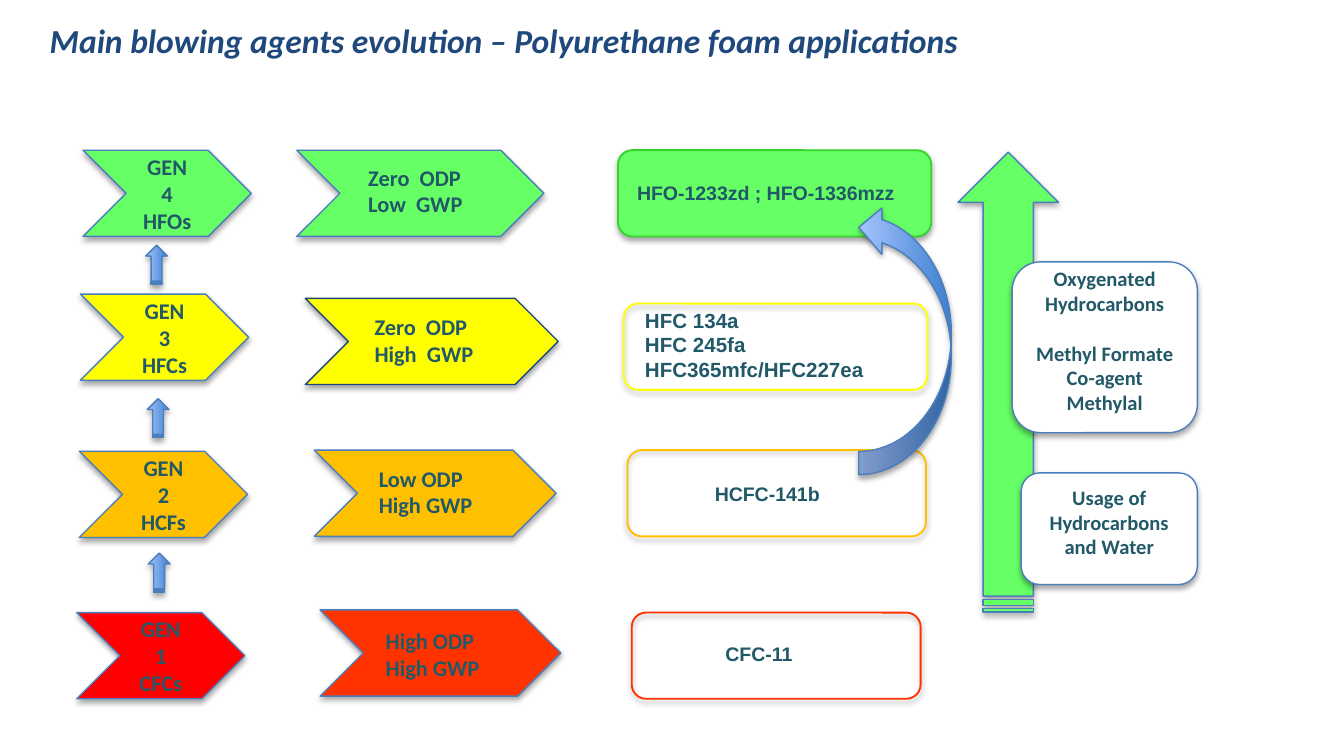
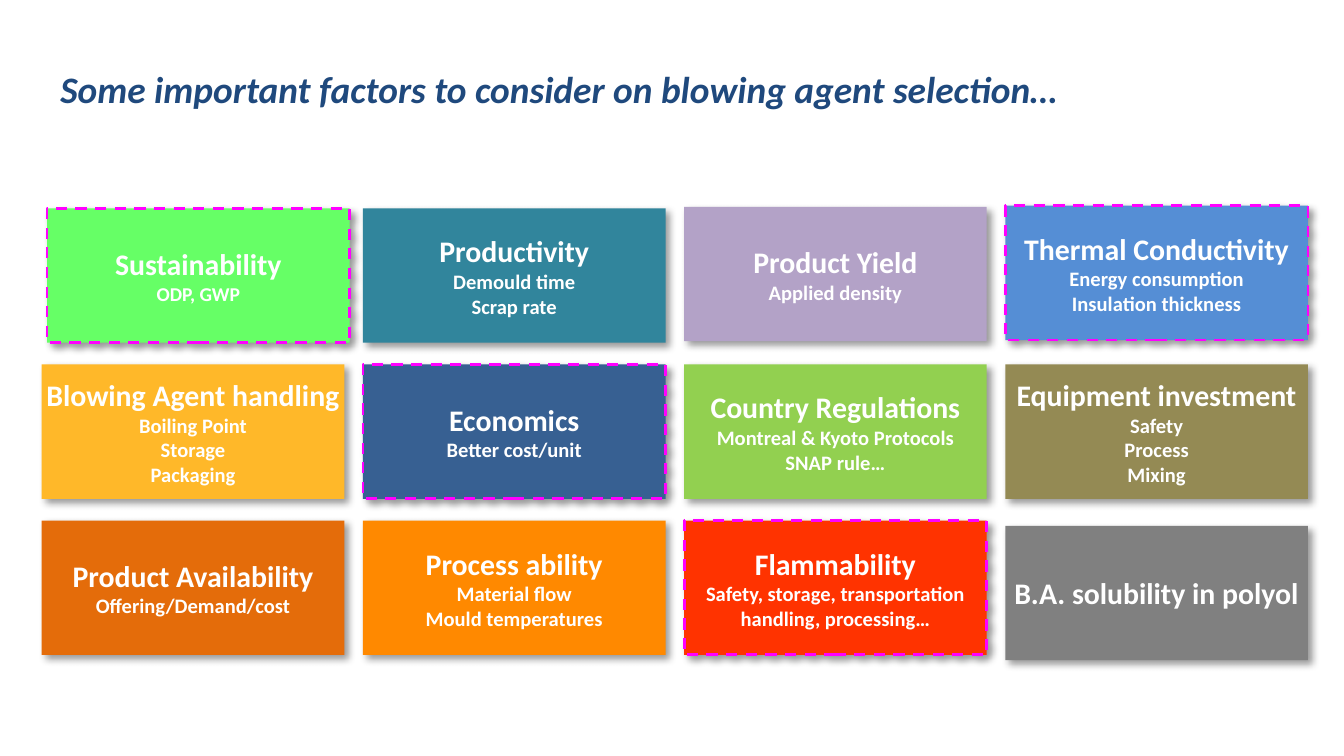
from lxml import etree
from pptx import Presentation
from pptx import util as u
from pptx.dml.color import RGBColor
from pptx.enum import dml, shapes, text
from pptx.oxml.ns import qn

Cm, Pt = u.Cm, u.Pt
KIND = shapes.MSO_SHAPE

NAVY, TEAL, EDGE, WHITE = "1F497D", "215968", "4B7EBC", "FFFFFF"
GREEN, YELLOW, AMBER, RED, SCARLET = "66FF66", "FFFF00", "FFC000", "FF0000", "FF3300"
MAGENTA = "FF00FF"
BLUES = ("3F80CE", "A4C4FF")
SOFT = (35, 3.1, 1.8, 90)
DROP = (40, 4, 3, 45)

EVOLUTION_TITLE = "Main blowing agents evolution – Polyurethane foam applications"
FACTORS_TITLE = "Some important factors to consider on blowing agent selection…"

ROW_H = 1.63
GENERATIONS = [
    (1.57, 2.84, GREEN, ["GEN 4", "HFOs"]),
    (1.52, 5.56, YELLOW, ["GEN 3", "HFCs"]),
    (1.5, 8.53, AMBER, ["GEN", "2", "HCFs"]),
    (1.45, 11.58, RED, ["GEN 1", "CFCs"]),
]
IMPACTS = [
    (5.61, 2.84, 4.67, GREEN, EDGE, (6.71, 2.97), ["Zero  ODP", "Low  GWP"]),
    (5.77, 5.64, 4.78, YELLOW, NAVY, (6.83, 5.79), ["Zero  ODP", "High  GWP"]),
    (5.94, 8.51, 4.57, AMBER, EDGE, (6.91, 8.66), ["Low ODP", "High GWP"]),
    (6.05, 11.53, 4.55, SCARLET, EDGE, (7.04, 11.73), ["High ODP", "High GWP"]),
]
AGENTS = [
    (11.68, 2.84, 5.92, GREEN, "34D42C", (11.79, 3.3, 5.69, 1.14), 10.5,
     ["HFO-1233zd ; HFO-1336mzz"]),
    (11.79, 5.74, 5.74, None, YELLOW, (11.94, 5.69, 4.8, 1.7), 11,
     ["HFC 134a", "HFC 245fa", "HFC365mfc/HFC227ea"]),
    (11.86, 8.51, 5.64, None, AMBER, (13.26, 8.99, 2.59, 0.74), 10.5, ["HCFC-141b"]),
    (11.94, 11.58, 5.46, None, SCARLET, (13.46, 12.01, 2.06, 0.74), 10.5, ["CFC-11"]),
]
STEPS = [(2.59, 4.8), (2.62, 7.7), (2.64, 10.62)]
ALTERNATIVES = [
    ((19.3, 8.94, 3.33, 2.11), 0.13, ["Usage of Hydrocarbons and Water"]),
    ((19.13, 4.95, 3.5, 3.23), 0,
     ["Oxygenated Hydrocarbons", "Methyl Formate", "Co-agent", "Methylal"]),
]

FACTORS = [
    [(GREEN, "Sustainability", ["ODP, GWP"]),
     ("31859C", "Productivity", ["Demould time", "Scrap rate"]),
     ("B3A2C7", "Product Yield", ["Applied density"]),
     ("558ED5", "Thermal Conductivity", ["Energy consumption", "Insulation thickness"])],
    [("FFB829", "Blowing Agent handling", ["Boiling Point", "Storage", "Packaging"]),
     ("376092", "Economics", ["Better cost/unit"]),
     ("92D050", "Country Regulations", ["Montreal & Kyoto Protocols", "SNAP rule…"]),
     ("948A54", "Equipment investment", ["Safety", "Process", "Mixing"])],
    [("E46C0A", "Product Availability", ["Offering/Demand/cost"]),
     ("FF8900", "Process ability", ["Material flow", "Mould temperatures"]),
     (SCARLET, "Flammability", ["Safety, storage, transportation", "handling, processing…"]),
     ("808080", "B.A. solubility in polyol", [])],
]
KEY_FACTORS = {"Sustainability", "Thermal Conductivity", "Economics", "Flammability"}
NUDGES = {"Sustainability": (0.1, 0), "Thermal Conductivity": (0, -0.05),
          "Product Yield": (0, -0.03), "B.A. solubility in polyol": (0, 0.1)}
GRID_X, GRID_Y, PITCH_X, PITCH_Y, TILE_W, TILE_H = 0.79, 3.94, 6.07, 2.95, 5.72, 2.54


def rgb(value):
    return RGBColor.from_string(value)


def add_shadow(sp, alpha, blur, dist, angle):
    sp.shadow.inherit = False
    effects = sp._element.spPr.find(qn("a:effectLst"))
    outer = etree.SubElement(effects, qn("a:outerShdw"), blurRad=str(Pt(blur)),
                             dist=str(Pt(dist)), dir=str(angle * 60000), rotWithShape="0")
    color = etree.SubElement(outer, qn("a:srgbClr"), val="000000")
    etree.SubElement(color, qn("a:alpha"), val=str(alpha * 1000))


def add_shape(s, kind, box, fill, line=EDGE, width=0.75, shadow=SOFT, rotation=0):
    sp = s.shapes.add_shape(kind, *map(Cm, box))
    sp.rotation = rotation
    if fill is None:
        sp.fill.background()
    elif fill is BLUES:
        sp.fill.gradient()
        sp.fill.gradient_angle = 90
        for stop, color in zip(sp.fill.gradient_stops, BLUES):
            stop.color.rgb = rgb(color)
    else:
        sp.fill.solid()
        sp.fill.fore_color.rgb = rgb(fill)
    if line:
        sp.line.color.rgb = rgb(line)
        sp.line.width = Pt(width)
    else:
        sp.line.fill.background()
    add_shadow(sp, *shadow)
    return sp


def write(sp, lines, sizes, color=TEAL, font="Calibri", align=text.PP_ALIGN.CENTER,
          italic=None, wrap=True):
    tf = sp.text_frame
    tf.word_wrap = wrap
    for i, (line, size) in enumerate(zip(lines, sizes)):
        p = tf.paragraphs[0] if i == 0 else tf.add_paragraph()
        p.text = line
        p.alignment = align
        p.font.name, p.font.size, p.font.bold = font, Pt(size), True
        p.font.italic = italic
        p.font.color.rgb = rgb(color)
    return tf


def add_label(s, box, lines, size, **style):
    sp = s.shapes.add_textbox(*map(Cm, box))
    write(sp, lines, [size] * len(lines), align=text.PP_ALIGN.LEFT, **style)


def add_slide(prs, title, box, size):
    s = prs.slides.add_slide(prs.slide_layouts[6])
    add_label(s, box, [title], size, color=NAVY, italic=True)
    return s


def build_evolution(prs):
    s = add_slide(prs, EVOLUTION_TITLE, (0.69, 0.25, 18.95, 1.02), 18)
    for x, y, w, fill, line, place, lines in IMPACTS:
        add_shape(s, KIND.CHEVRON, (x, y, w, ROW_H), fill, line)
        add_label(s, (*place, 3.6, 1.32), lines, 12)
    for x, y, w, fill, line, place, size, lines in AGENTS:
        add_shape(s, KIND.ROUNDED_RECTANGLE, (x, y, w, ROW_H), fill, line, 1)
        add_label(s, place, lines, size, font="Arial")
    for x, y in STEPS:
        add_shape(s, KIND.STRIPED_RIGHT_ARROW, (x, y, 0.74, 0.41), BLUES, rotation=270)
    for x, y, fill, lines in GENERATIONS:
        sp = add_shape(s, KIND.CHEVRON, (x, y, 3.18, ROW_H), fill)
        write(sp, lines, [12] * len(lines))
    add_shape(s, KIND.STRIPED_RIGHT_ARROW, (14.71, 6.27, 8.69, 1.9), GREEN, rotation=270)
    add_shape(s, KIND.CURVED_UP_ARROW, (14.55, 5.54, 5.11, 1.75), BLUES, rotation=270)
    for box, top, lines in ALTERNATIVES:
        sp = add_shape(s, KIND.ROUNDED_RECTANGLE, box, WHITE)
        tf = write(sp, lines, [11] * len(lines))
        tf.margin_top, tf.margin_bottom = Cm(top), Cm(top + 0.26)
        if len(lines) > 1:
            tf.paragraphs[1].space_before = Pt(13.4)


def build_factors(prs):
    s = add_slide(prs, FACTORS_TITLE, (0.89, 1.12, 20.93, 1.12), 20)
    for row, tiles in enumerate(FACTORS):
        for col, (fill, name, details) in enumerate(tiles):
            dx, dy = NUDGES.get(name, (0, 0))
            box = (GRID_X + col * PITCH_X + dx, GRID_Y + row * PITCH_Y + dy, TILE_W, TILE_H)
            key = name in KEY_FACTORS
            sp = add_shape(s, KIND.RECTANGLE, box, fill, MAGENTA if key else None, 1.5, DROP)
            if key:
                sp.line.dash_style = dml.MSO_LINE.DASH
            small = 10.5 if name == "Sustainability" else 11
            write(sp, [name, *details], [16] + [small] * len(details), WHITE, wrap=False)


def main():
    prs = Presentation()
    prs.slide_width, prs.slide_height = Cm(25.4), Cm(14.29)
    build_evolution(prs)
    build_factors(prs)
    prs.save("out.pptx")


if __name__ == "__main__":
    main()
